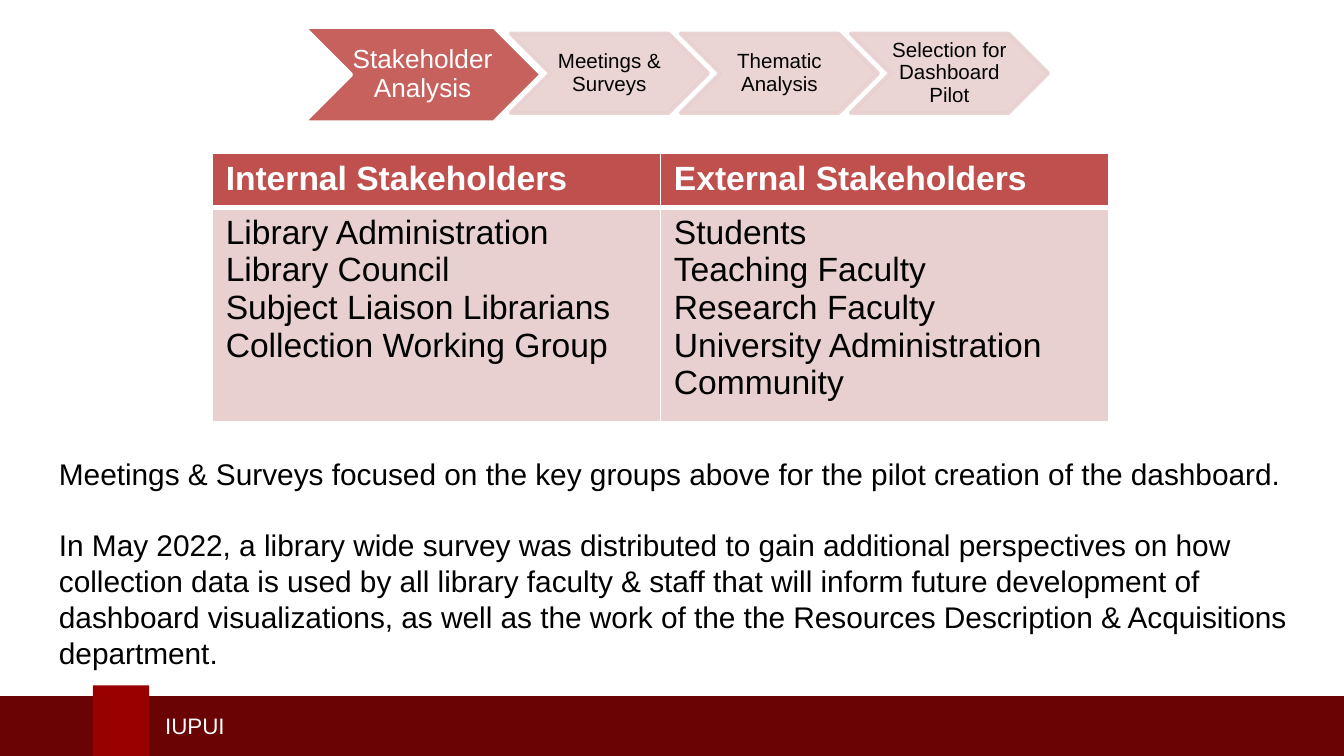
from dataclasses import dataclass

from lxml import etree
from pptx import Presentation
from pptx import util as u
from pptx.dml.color import RGBColor
from pptx.enum import shapes, text
from pptx.oxml.ns import qn


@dataclass(frozen=True)
class Theme:
    """Colours, type sizes and font of the slide."""
    font: str = "Arial"
    white: str = "FFFFFF"
    black: str = "000000"
    red: str = "C0504D"
    pink: str = "E8D0D0"
    maroon: str = "690304"
    crimson: str = "990000"
    active: int = 14
    step: int = 11
    table: int = 18
    body: int = 16
    footer: int = 12


T = Theme()
STEPS = ["Meetings & Surveys", "Thematic Analysis", "Selection for Dashboard Pilot"]
STAKEHOLDERS = {
    "Internal Stakeholders": ["Library Administration", "Library Council",
                              "Subject Liaison Librarians", "Collection Working Group"],
    "External Stakeholders": ["Students", "Teaching Faculty", "Research Faculty",
                              "University Administration", "Community"],
}
BODY = [
    "Meetings & Surveys focused on the key groups above for the pilot creation of the dashboard.",
    "In May 2022, a library wide survey was distributed to gain additional perspectives on how "
    "collection data is used by all library faculty & staff that will inform future development "
    "of dashboard visualizations, as well as the work of the the Resources Description & "
    "Acquisitions department.",
]


def set_attrs(obj, values):
    """Set each attribute of obj from a dict of format values."""
    for name, value in values.items():
        setattr(obj, name, value)


def box(at):
    """Turn inches into a left, top, width, height tuple."""
    return [u.Inches(v) for v in at]


def write(tf, lines, size, color, bold=False, frame=None, para=None, gap=0):
    """Write lines as paragraphs, with gap points between them."""
    set_attrs(tf, {"word_wrap": True, **(frame or {})})
    for i, line in enumerate(lines):
        p = tf.add_paragraph() if i else tf.paragraphs[0]
        set_attrs(p, {"space_before": u.Pt(gap if i else 0), **(para or {})})
        r = p.add_run()
        r.text = line
        set_attrs(r.font, {"name": T.font, "size": u.Pt(size), "bold": bold})
        r.font.color.rgb = RGBColor.from_string(color)


def add_block(slide, kind, at, fill, line=None):
    """Add a filled preset shape without shadow."""
    sp = slide.shapes.add_shape(kind, *box(at))
    sp.shadow.inherit = False
    sp.fill.solid()
    sp.fill.fore_color.rgb = RGBColor.from_string(fill)
    if line:
        sp.line.color.rgb = RGBColor.from_string(line)
        sp.line.width = u.Pt(2)
    else:
        sp.line.fill.background()
    return sp


def add_step(slide, label, at, fill, line, size, color):
    """Add one translucent chevron with its centred label."""
    sp = add_block(slide, shapes.MSO_SHAPE.CHEVRON, at, fill, line)
    for clr in sp._element.spPr.iter(qn("a:srgbClr")):
        if clr.get("val") != T.white:
            etree.SubElement(clr, qn("a:alpha"), val="90000")
    frame = dict(margin_left=0, margin_right=0, margin_top=u.Inches(0.01),
                 margin_bottom=u.Inches(0.01), vertical_anchor=text.MSO_ANCHOR.MIDDLE)
    write(sp.text_frame, [label], size, color, frame=frame,
          para=dict(alignment=text.PP_ALIGN.CENTER, line_spacing=0.9))


def add_text(slide, at, lines, size, color, frame=None, gap=0):
    """Add a wrapping text box."""
    sp = slide.shapes.add_textbox(*box(at))
    write(sp.text_frame, lines, size, color, frame=frame, gap=gap)


def set_borders(cell, widths):
    """Give a cell white borders, widths in points by side."""
    tc_pr = cell._tc.get_or_add_tcPr()
    for i, (side, width) in enumerate(widths.items()):
        ln = etree.Element(qn(f"a:ln{side}"), w=str(u.Pt(width)))
        fill = etree.SubElement(ln, qn("a:solidFill"))
        etree.SubElement(fill, qn("a:srgbClr"), val=T.white)
        tc_pr.insert(i, ln)


def fill_cell(cell, lines, fill, color, bold, top, bottom):
    """Fill, border and write one table cell."""
    cell.fill.solid()
    cell.fill.fore_color.rgb = RGBColor.from_string(fill)
    set_borders(cell, {"L": 1, "R": 1, "T": top, "B": bottom})
    write(cell.text_frame, lines, T.table, color, bold)


def add_stakeholders(slide):
    """Add the table with one column for each stakeholder group."""
    sp = slide.shapes.add_table(2, len(STAKEHOLDERS), *box((1.58, 1.14, 6.67, 2.01)))
    table = sp.table
    for row, height in zip(table.rows, (0.4, 1.6)):
        row.height = u.Inches(height)
    for col, (heading, members) in enumerate(STAKEHOLDERS.items()):
        fill_cell(table.cell(0, col), [heading], T.red, T.white, True, 1, 3)
        fill_cell(table.cell(1, col), members, T.pink, T.black, False, 3, 1)


def add_footer(slide):
    """Add the footer band, its tab and the university name."""
    rect = shapes.MSO_SHAPE.RECTANGLE
    add_block(slide, rect, (-0.03, 5.18, 10.09, 0.5), T.maroon)
    add_block(slide, rect, (0.69, 5.1, 0.42, 0.58), T.crimson)
    add_text(slide, (1.13, 5.25, 3.95, 0.3), ["IUPUI"], T.footer, T.white,
             frame=dict(vertical_anchor=text.MSO_ANCHOR.MIDDLE))


def main():
    """Build the stakeholder analysis slide."""
    prs = Presentation()
    width = u.Inches(10)
    set_attrs(prs, {"slide_width": width, "slide_height": width * 9 // 16})
    slide = prs.slides.add_slide(prs.slide_layouts[6])
    add_footer(slide)
    add_step(slide, "Stakeholder Analysis", (2.26, 0.2, 1.77, 0.71),
             T.red, T.white, T.active, T.white)
    for i, label in enumerate(STEPS):
        add_step(slide, label, (3.8 + 2.53 * i / 2, 0.25, 1.47, 0.59),
                 T.pink, T.pink, T.step, T.black)
    add_stakeholders(slide)
    add_text(slide, (0.34, 3.34, 9.6, 2.28), BODY, T.body, T.black, gap=19)
    prs.save("out.pptx")


if __name__ == "__main__":
    main()
